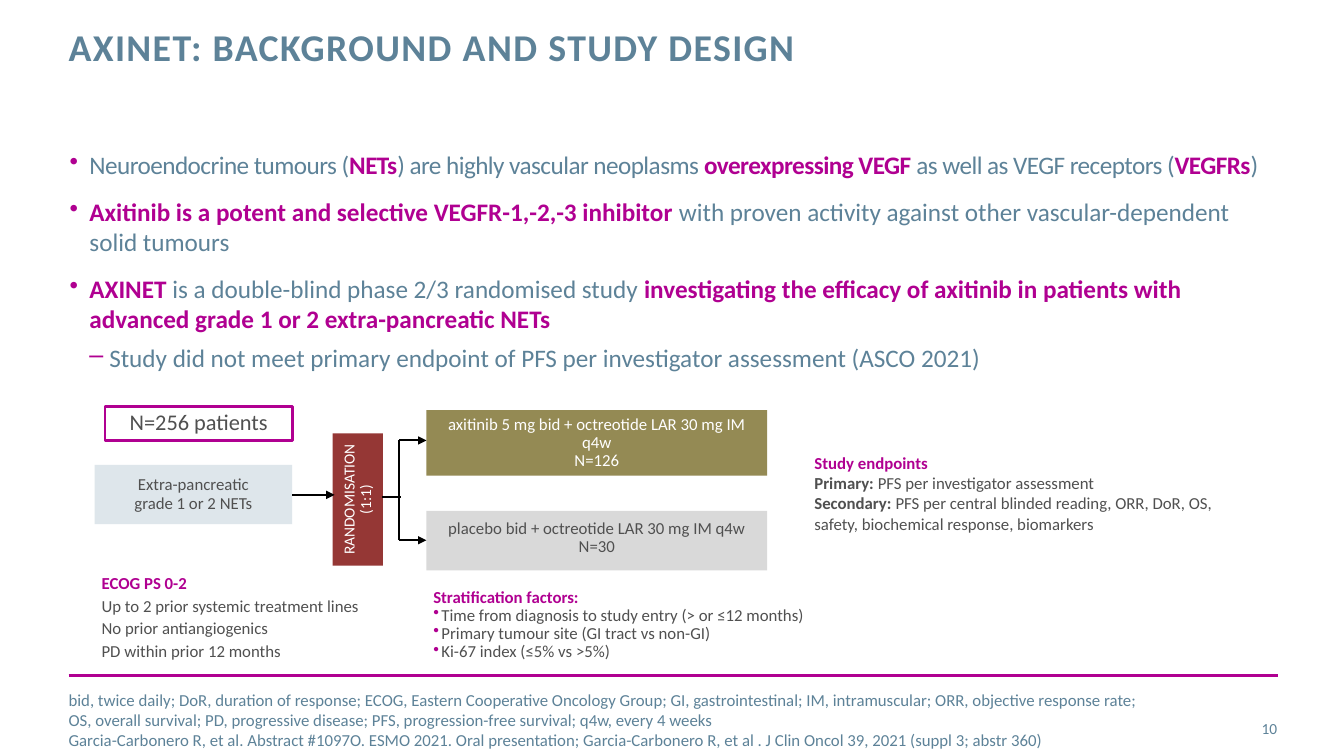
import pptx
import pptx.util
import pptx.dml.color
import pptx.enum.shapes
import pptx.enum.text
import lxml.etree

Pt = pptx.util.Pt
ALIGN = pptx.enum.text.PP_ALIGN
ANCHOR = pptx.enum.text.MSO_ANCHOR
HUES = {
    "slate": "5D8298", "pink": "B00091", "grey": "505050", "white": "FFFFFF",
    "black": "000000", "pale": "DEE6EB", "olive": "948A54", "silver": "D9D9D9",
    "brick": "953735",
}
INSET = (7.2, 3.6, 7.2, 3.6)
FLAT = (0, 0, 0, 0)


def color(name):
    return pptx.dml.color.RGBColor.from_string(HUES[name])


def node(parent, tag, **attrs):
    return lxml.etree.SubElement(parent, pptx.oxml.ns.qn(tag), **attrs)


def bullet(para, mark, left, hang):
    props = para._p.get_or_add_pPr()
    props.set("marL", str(Pt(left)))
    props.set("indent", str(-Pt(hang)))
    node(node(props, "a:buClr"), "a:srgbClr", val=HUES["pink"])
    node(props, "a:buChar", char=mark)


def write(para, text, size, hue, strong="pink", track=0):
    """Fill a paragraph; parts between asterisks are bold in the strong colour."""
    for i, part in enumerate(text.split("*")):
        if not part:
            continue
        run = para.add_run()
        run.text = part
        font = run.font
        font.name, font.size, font.bold = "Calibri", Pt(size), i % 2 == 1
        font.color.rgb = color(strong if i % 2 else hue)
        if track:
            run._r.get_or_add_rPr().set("spc", str(round(track * 100)))


def setup(frame, inset, anchor):
    frame.word_wrap = True
    frame.vertical_anchor = anchor
    (frame.margin_left, frame.margin_top,
     frame.margin_right, frame.margin_bottom) = map(Pt, inset)


def paras(frame, count):
    """Yield the given number of paragraphs, the first being the existing one."""
    yield frame.paragraphs[0]
    for _ in range(count - 1):
        yield frame.add_paragraph()


def label(slide, box, lines, size, hue, inset=INSET, anchor=ANCHOR.TOP,
          align=ALIGN.LEFT, space=None, after=None, strong="pink", track=0):
    frame = slide.shapes.add_textbox(*map(Pt, box)).text_frame
    setup(frame, inset, anchor)
    for para, text in zip(paras(frame, len(lines)), lines):
        para.alignment = align
        para.line_spacing = space
        para.space_after = after
        write(para, text, size, hue, strong, track)
    return frame


def block(slide, box, lines, size, hue, fill=None, edge=None, inset=INSET, turn=False):
    kind = pptx.enum.shapes.MSO_SHAPE.RECTANGLE
    shape = slide.shapes.add_shape(kind, *map(Pt, box))
    shape.shadow.inherit = False
    if fill:
        shape.fill.solid()
        shape.fill.fore_color.rgb = color(fill)
    else:
        shape.fill.background()
    if edge:
        shape.line.color.rgb = color(edge)
        shape.line.width = Pt(2)
    else:
        shape.line.fill.background()
    frame = shape.text_frame
    setup(frame, inset, ANCHOR.MIDDLE)
    if turn:
        frame._txBody.bodyPr.set("vert", "vert270")
    for para, text in zip(paras(frame, len(lines)), lines):
        para.alignment = ALIGN.CENTER
        para.line_spacing = 0.9
        write(para, text, size, hue)


def rule(slide, ends, hue="black", width=1.5, arrow=False):
    kind = pptx.enum.shapes.MSO_CONNECTOR.STRAIGHT
    line = slide.shapes.add_connector(kind, *map(Pt, ends))
    line.line.color.rgb = color(hue)
    line.line.width = Pt(width)
    if arrow:
        node(line.line._get_or_add_ln(), "a:tailEnd", type="triangle")
    node(line._element.spPr, "a:effectLst")


def points(slide):
    """Add the bulleted background statements."""
    rows = [
        ("Neuroendocrine tumours (*NETs*) are highly vascular neoplasms "
         "*overexpressing VEGF* as well as VEGF receptors (*VEGFRs*)", -0.4),
        ("*Axitinib is a potent and selective VEGFR-1,-2,-3 inhibitor *with proven "
         "activity against other vascular-dependent solid tumours", 0),
        ("*AXINET* is a double-blind phase 2/3 randomised study *investigating the "
         "efficacy of axitinib in patients with advanced grade 1 or 2 "
         "extra-pancreatic NETs*", 0),
        ("Study did not meet primary endpoint of PFS per investigator assessment "
         "(ASCO 2021)", 0),
    ]
    frame = slide.shapes.add_textbox(*map(Pt, (49.7, 106.6, 859, 182))).text_frame
    setup(frame, FLAT, ANCHOR.TOP)
    last = len(rows) - 1
    for i, (para, (text, track)) in enumerate(zip(paras(frame, len(rows)), rows)):
        sub = i == last
        para.level = int(sub)
        bullet(para, "–" if sub else "•", 28.4 if sub else 14.2, 14.2)
        if i:
            para.space_before = Pt(6 if sub else 12)
        write(para, text, 18, "slate", track=track)


def flow(slide):
    """Add the trial diagram from patients to treatment arms."""
    block(slide, (75, 290.2, 134, 24.5), ["N=256 patients"], 16, "grey", edge="pink")
    block(slide, (67.7, 332, 141, 42.5), ["Extra-pancreatic", "grade 1 or 2 NETs"],
          12, "grey", "pale")
    block(slide, (237.6, 309.6, 36, 94.5), ["RANDOMISATION (1:1)"], 11, "white",
          "brick", inset=FLAT, turn=True)
    block(slide, (304.6, 293, 243.4, 46.8),
          ["axitinib 5 mg bid + octreotide LAR 30 mg IM q4w", "N=126"],
          12, "white", "olive")
    block(slide, (304.6, 365, 243.4, 42.5),
          ["placebo bid + octreotide LAR 30 mg IM q4w", "N=30"],
          12, "grey", "silver", inset=(7.2, 0, 7.2, 3.6))
    fork, arms = 285.1, (314.6, 385.9)
    rule(slide, (208.8, 353.5, 239, 353.5), arrow=True)
    rule(slide, (273, 355, 286.6, 355))
    rule(slide, (fork, arms[1], fork, arms[0]))
    for y in arms:
        rule(slide, (fork, y, 304.6, y), arrow=True)


def notes(slide):
    """Add the text around the diagram."""
    label(slide, (574.6, 319.7, 329.8, 65.5), [
        "*Study endpoints*"], 12, "grey")
    label(slide, (574.6, 334.3, 329.8, 50.9), [
        "*Primary: *PFS per investigator assessment",
        "*Secondary: *PFS per central blinded reading, ORR, DoR, OS, safety, "
        "biochemical response, biomarkers"], 12, "grey", strong="grey")
    label(slide, (65.5, 407.5, 208, 68.4), [
        "*ECOG PS 0-2*", "Up to 2 prior systemic treatment lines",
        "No prior antiangiogenics", "PD within prior 12 months"],
        12, "grey", space=0.9, after=Pt(3))
    strata = label(slide, (302.4, 416.9, 318.2, 59.8), [
        "*Stratification factors:*",
        "Time from diagnosis to study entry (> or ≤12 months)",
        "Primary tumour site (GI tract vs non-GI)",
        "Ki-67 index (≤5% vs >5%)"], 12, "grey", space=0.9)
    for para in strata.paragraphs[1:]:
        bullet(para, "•", 5.8, 5.8)


def main():
    deck = pptx.Presentation()
    deck.slide_width, deck.slide_height = Pt(960), Pt(540)
    slide = deck.slides.add_slide(deck.slide_layouts[6])
    rule(slide, (49, 482.4, 913, 482.4), "pink", 2)
    label(slide, (49, 19.4, 688.3, 63.4), ["*AXINET: BACKGROUND AND STUDY DESIGN*"],
          27, "slate", FLAT, space=Pt(30), strong="slate", track=1)
    points(slide)
    flow(slide)
    notes(slide)
    label(slide, (49, 499.7, 772.6, 28.8), [
        "bid, twice daily; DoR, duration of response; ECOG, Eastern Cooperative "
        "Oncology Group; GI, gastrointestinal; IM, intramuscular; ORR, objective "
        "response rate; OS, overall survival; PD, progressive disease; PFS, "
        "progression-free survival; q4w, every 4 weeks",
        "Garcia-Carbonero R, et al. Abstract #1097O. ESMO 2021. Oral presentation; "
        "Garcia-Carbonero R, et al . J Clin Oncol 39, 2021 (suppl 3; abstr 360)"],
        12, "slate", FLAT, ANCHOR.MIDDLE)
    label(slide, (850.3, 506.2, 62, 28.8), ["10"], 11, "slate", FLAT,
          ANCHOR.MIDDLE, ALIGN.RIGHT)
    deck.save("out.pptx")


if __name__ == "__main__":
    main()
